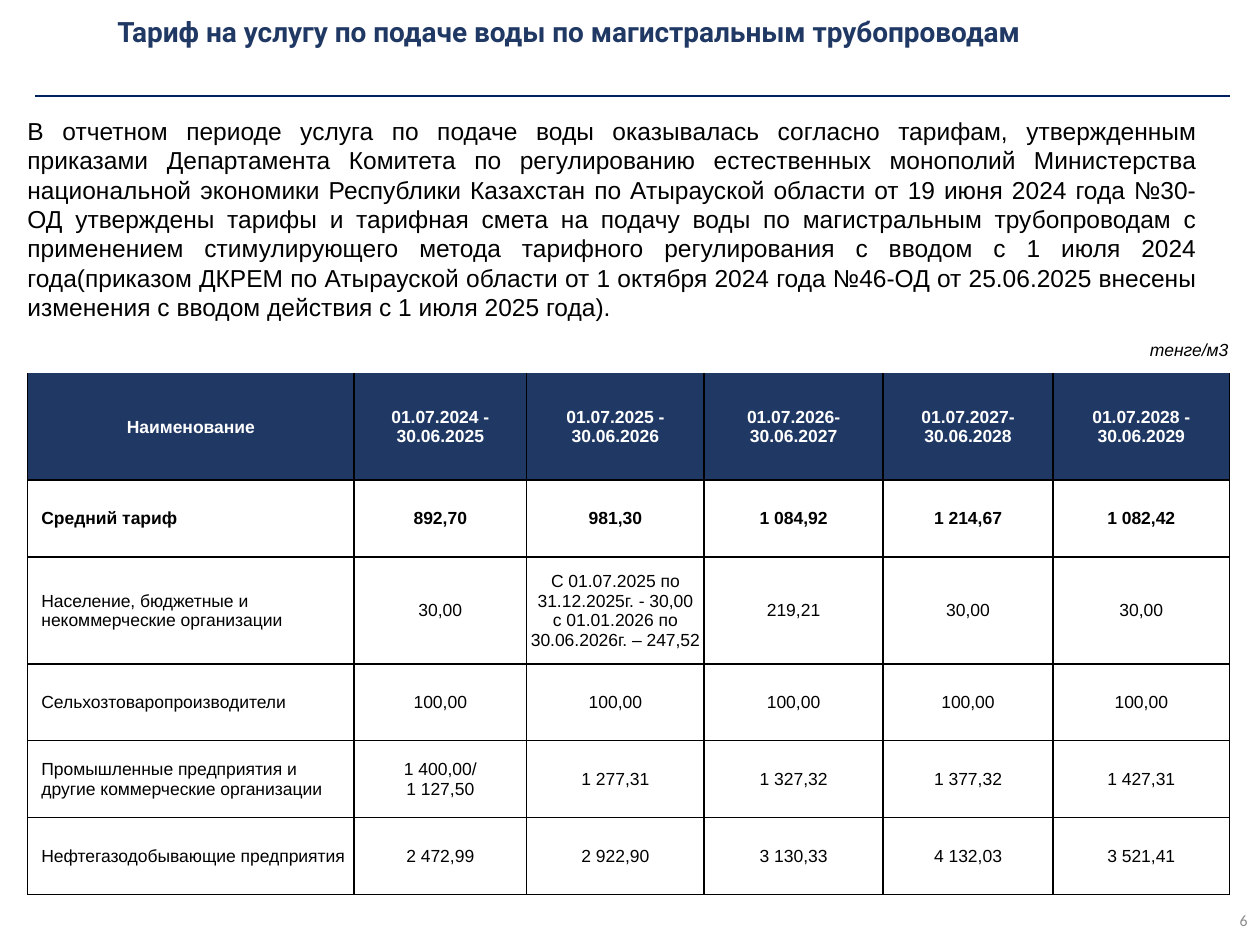
from lxml import etree
from pptx import Presentation
from pptx.dml.color import RGBColor
from pptx.enum.shapes import MSO_CONNECTOR
from pptx.enum.text import MSO_ANCHOR, PP_ALIGN
from pptx.oxml.ns import qn
from pptx.util import Pt

LEFT, CENTER, RIGHT, JUSTIFY = PP_ALIGN.LEFT, PP_ALIGN.CENTER, PP_ALIGN.RIGHT, PP_ALIGN.JUSTIFY
TOP, MIDDLE = MSO_ANCHOR.TOP, MSO_ANCHOR.MIDDLE
STRAIGHT = MSO_CONNECTOR.STRAIGHT
NAVY, BLACK, WHITE, GRAY = "203864", "000000", "FFFFFF", "8C8C8C"

TITLE = "Тариф на услугу по подаче воды по магистральным трубопроводам"
INTRO = (
    "В отчетном периоде услуга по подаче воды оказывалась согласно тарифам, "
    "утвержденным приказами Департамента Комитета по регулированию естественных "
    "монополий Министерства национальной экономики Республики Казахстан по "
    "Атырауской области от 19 июня 2024 года №30-ОД утверждены тарифы и тарифная "
    "смета на подачу воды по магистральным трубопроводам с применением "
    "стимулирующего метода тарифного регулирования с вводом с 1 июля 2024 "
    "года(приказом ДКРЕМ по Атырауской области от 1 октября 2024 года №46-ОД от "
    "25.06.2025 внесены изменения с вводом действия с 1 июля 2025 года)."
)
UNIT = "тенге/м3"
HEADER = ["Наименование", "01.07.2024 - 30.06.2025", "01.07.2025 - 30.06.2026",
          "01.07.2026- 30.06.2027", "01.07.2027-30.06.2028", "01.07.2028 - 30.06.2029"]
TARIFFS = [
    ["Средний тариф", "892,70", "981,30", "1 084,92", "1 214,67", "1 082,42"],
    ["Население, бюджетные и некоммерческие организации", "30,00",
     "С 01.07.2025 по 31.12.2025г. - 30,00\nс 01.01.2026 по 30.06.2026г. – 247,52",
     "219,21", "30,00", "30,00"],
    ["Сельхозтоваропроизводители"] + ["100,00"] * 5,
    ["Промышленные предприятия и другие коммерческие организации",
     "1 400,00/\n1 127,50", "1 277,31", "1 327,32", "1 377,32", "1 427,31"],
    ["Нефтегазодобывающие предприятия",
     "2 472,99", "2 922,90", "3 130,33", "4 132,03", "3 521,41"],
]
COLS = [186.5, 98.6, 101.5, 102.2, 97.2, 100.8]
ROWS = [25.9, 61.2, 43.9, 61.2, 43.9, 43.9, 43.9]


def rgb(color):
    return RGBColor.from_string(color)


def write(tf, text, size, color, font="Arial", align=LEFT, bold=False, italic=False):
    for i, line in enumerate(text.split("\n")):
        p = tf.add_paragraph() if i else tf.paragraphs[0]
        p.alignment = align
        r = p.add_run()
        r.text = line
        r.font.name = font
        r.font.size = Pt(size)
        r.font.bold = bold
        r.font.italic = italic
        r.font.color.rgb = rgb(color)


def add_title(slide):
    sp = slide.shapes.title
    sp.left, sp.top, sp.width, sp.height = Pt(59.8), Pt(2.9), Pt(643), Pt(30.2)
    sp.text_frame.vertical_anchor = MIDDLE
    write(sp.text_frame, TITLE, 16, NAVY, "Roboto", bold=True)


def add_text(slide, left, top, width, height, text, size, color, font, align, anchor):
    sp = slide.shapes.add_textbox(Pt(left), Pt(top), Pt(width), Pt(height))
    tf = sp.text_frame
    tf.word_wrap = True
    tf.vertical_anchor = anchor
    write(tf, text, size, color, font, align)


def add_rule(slide, left, right, y, color):
    line = slide.shapes.add_connector(STRAIGHT, Pt(left), Pt(y), Pt(right), Pt(y))
    line.line.color.rgb = rgb(color)
    line.line.width = Pt(1)
    etree.SubElement(line._element.spPr, qn("a:effectLst"))


def set_borders(cell, sides):
    tcPr = cell._tc.get_or_add_tcPr()
    for i, side in enumerate("LRTB"):
        ln = etree.Element(qn(f"a:ln{side}"), w=str(Pt(1)))
        if side in sides:
            fill = etree.SubElement(ln, qn("a:solidFill"))
            etree.SubElement(fill, qn("a:srgbClr"), val=BLACK)
        else:
            etree.SubElement(ln, qn("a:noFill"))
        tcPr.insert(i, ln)


def format_cell(cell, sides, fill=None):
    cell.vertical_anchor = MIDDLE
    cell.margin_left = cell.margin_right = cell.margin_top = Pt(0.7)
    cell.margin_bottom = 0
    if fill:
        cell.fill.solid()
        cell.fill.fore_color.rgb = rgb(fill)
    else:
        cell.fill.background()
    set_borders(cell, sides)


def add_tariff_table(slide):
    frame = slide.shapes.add_table(len(ROWS), len(COLS), Pt(15.8), Pt(187.2),
                                   Pt(sum(COLS)), Pt(sum(ROWS)))
    table = frame.table
    table.first_row = table.horz_banding = False
    for column, width in zip(table.columns, COLS):
        column.width = Pt(width)
    for row, height in zip(table.rows, ROWS):
        row.height = Pt(height)

    for c in range(len(COLS)):
        format_cell(table.cell(0, c), "")
    table.cell(0, 0).merge(table.cell(0, 1))
    write(table.cell(0, len(COLS) - 1).text_frame, UNIT, 10, BLACK, align=RIGHT, italic=True)

    for c, text in enumerate(HEADER):
        cell = table.cell(1, c)
        format_cell(cell, "LRB", NAVY)
        if c:
            cell.margin_left = cell.margin_right = Pt(7.2)
        write(cell.text_frame, text, 10, WHITE, align=CENTER, bold=True)

    for r, values in enumerate(TARIFFS, 2):
        for c, text in enumerate(values):
            cell = table.cell(r, c)
            format_cell(cell, "LRTB")
            write(cell.text_frame, text, 10, BLACK, align=CENTER if c else LEFT, bold=r == 2)
        name = table.cell(r, 0).text_frame.paragraphs[0]
        name._p.get_or_add_pPr().set("marL", str(Pt(7.2)))


def main():
    prs = Presentation()
    prs.slide_width, prs.slide_height = Pt(720), Pt(540)
    slide = prs.slides.add_slide(prs.slide_layouts[5])
    add_text(slide, 8.6, 62.6, 682.6, 143.3, INTRO, 14, BLACK, "Arial", JUSTIFY, TOP)
    add_text(slide, 558, 511.2, 162, 28.8, "6", 9, GRAY, "Calibri", RIGHT, MIDDLE)
    add_title(slide)
    add_rule(slide, 20.2, 702.7, 54.7, "002060")
    add_tariff_table(slide)
    prs.save("out.pptx")


if __name__ == "__main__":
    main()
